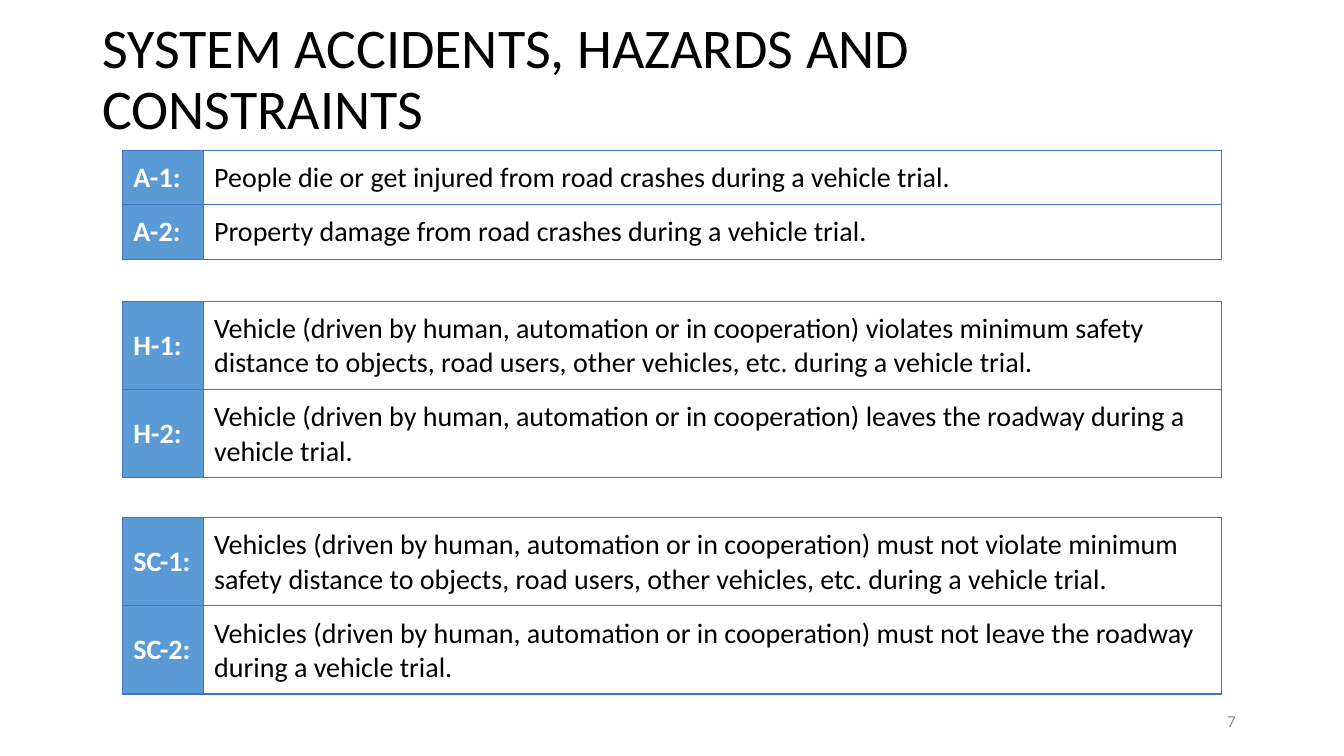
from pptx import Presentation
from pptx.dml.color import RGBColor
from pptx.enum.text import MSO_ANCHOR as Anchor, PP_ALIGN as Align
from pptx.oxml import parse_xml
from pptx.oxml.ns import nsdecls
from pptx.util import Pt

PX = 9525
ACCIDENTS = [
    ("A-1:", "People die or get injured from road crashes during a vehicle trial."),
    ("A-2:", "Property damage from road crashes during a vehicle trial."),
]
HAZARDS = [
    ("H-1:", "Vehicle (driven by human, automation or in cooperation) violates minimum safety "
             "distance to objects, road users, other vehicles, etc. during a vehicle trial."),
    ("H-2:", "Vehicle (driven by human, automation or in cooperation) leaves the roadway "
             "during a vehicle trial."),
]
CONSTRAINTS = [
    ("SC-1:", "Vehicles (driven by human, automation or in cooperation) must not violate minimum "
              "safety distance to objects, road users, other vehicles, etc. during a vehicle trial."),
    ("SC-2:", "Vehicles (driven by human, automation or in cooperation) must not leave the roadway "
              "during a vehicle trial."),
]


def px(*lengths):
    return [length * PX for length in lengths]


def color(value):
    return RGBColor.from_string(value)


def apply(target, values):
    for key, value in values.items():
        setattr(target, key, value)


class SlideBuilder:
    """Draws the elements of one slide in a shared style."""

    font = "Calibri"
    ink, paper, label_fill, border = "000000", "FFFFFF", "5B9BD5", "4472C4"
    label_width, cell_inset = 77, 10

    def __init__(self, slide):
        self.slide = slide

    def fill_text(self, frame, content, size, ink, bold=False, **paragraph_format):
        paragraph = frame.paragraphs[0]
        apply(paragraph, paragraph_format)
        run = paragraph.add_run()
        run.text = content
        apply(run.font, {"name": self.font, "size": Pt(size), "bold": bold})
        run.font.color.rgb = color(ink)

    def text(self, box, content, size, ink, **paragraph_format):
        frame = self.slide.shapes.add_textbox(*px(*box)).text_frame
        apply(frame, {"word_wrap": True, "vertical_anchor": Anchor.MIDDLE,
                      "margin_right": 15 * PX})
        self.fill_text(frame, content, size, ink, **paragraph_format)

    def cell(self, cell, content, is_label):
        inset = self.cell_inset * PX
        apply(cell, {"vertical_anchor": Anchor.MIDDLE, "margin_left": inset,
                     "margin_right": inset, "margin_top": inset, "margin_bottom": inset})
        properties = cell._tc.get_or_add_tcPr()
        for side in "LRTB":
            properties.append(parse_xml(
                f'<a:ln{side} {nsdecls("a")} w="12700"><a:solidFill>'
                f'<a:srgbClr val="{self.border}"/></a:solidFill></a:ln{side}>'))
        if is_label:
            cell.fill.solid()
            cell.fill.fore_color.rgb = color(self.label_fill)
        else:
            cell.fill.background()
        self.fill_text(cell.text_frame, content, 20,
                       self.paper if is_label else self.ink, is_label)

    def table(self, left, top, width, row_height, entries):
        box = px(left, top, width, row_height * len(entries))
        table = self.slide.shapes.add_table(len(entries), 2, *box).table
        apply(table, {"first_row": False, "horz_banding": False})
        table.columns[0].width, table.columns[1].width = px(
            self.label_width, width - self.label_width)
        for row, entry in zip(table.rows, entries):
            row.height = row_height * PX
            for column, content in enumerate(entry):
                self.cell(row.cells[column], content, column == 0)


def main():
    deck = Presentation()
    deck.slide_width, deck.slide_height = px(1280, 720)
    builder = SlideBuilder(deck.slides.add_slide(deck.slide_layouts[6]))
    builder.text((88, 38, 1104, 78), "SYSTEM ACCIDENTS, HAZARDS AND CONSTRAINTS", 40,
                 builder.ink, line_spacing=0.9)
    for top, row_height, entries in ((143, 51, ACCIDENTS), (287, 84, HAZARDS),
                                     (493, 84, CONSTRAINTS)):
        builder.table(117, top, 1046, row_height, entries)
    builder.text((904, 667, 288, 38), "7", 12, "8C8C8C", alignment=Align.RIGHT)
    deck.save("out.pptx")


if __name__ == "__main__":
    main()
